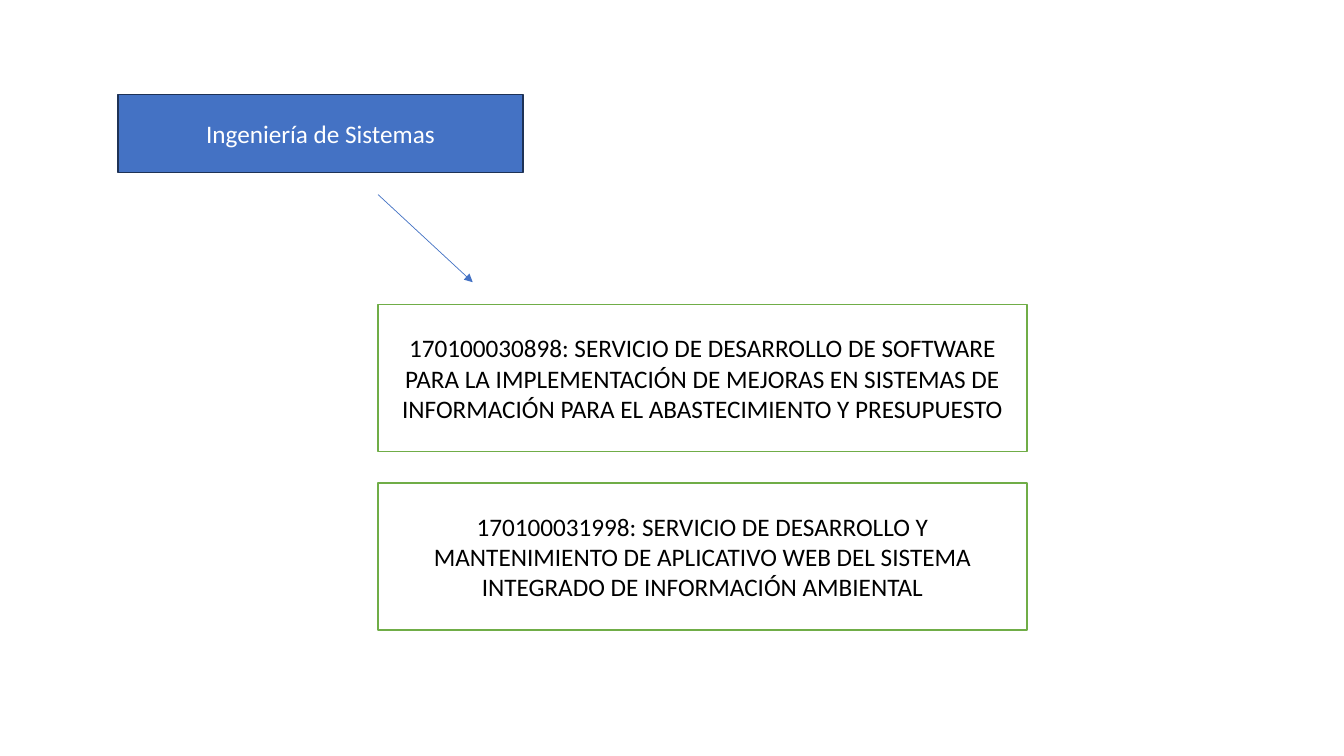
"""Build a slide that links a degree programme to its two service contracts."""
from dataclasses import dataclass

from lxml.etree import SubElement
from pptx import Presentation
from pptx.dml.color import RGBColor
from pptx.enum.shapes import MSO_CONNECTOR, MSO_SHAPE
from pptx.enum.text import MSO_ANCHOR, PP_ALIGN
from pptx.oxml.ns import qn
from pptx.slide import Slide
from pptx.util import Pt

SERVICE_LEFT = 270
SERVICE_TOP = 217.44
SERVICE_PITCH = 127.44
SERVICES = [
    "170100030898: SERVICIO DE DESARROLLO DE SOFTWARE PARA LA IMPLEMENTACIÓN "
    "DE MEJORAS EN SISTEMAS DE INFORMACIÓN PARA EL ABASTECIMIENTO Y PRESUPUESTO",
    "170100031998: SERVICIO DE DESARROLLO Y MANTENIMIENTO DE APLICATIVO WEB "
    "DEL SISTEMA INTEGRADO DE INFORMACIÓN AMBIENTAL",
]


@dataclass
class Box:
    text: str
    left: float
    top: float
    width: float
    height: float
    fill: str
    line: str
    text_color: str


@dataclass
class Arrow:
    start: tuple[float, float]
    end: tuple[float, float]
    color: str
    width: float


def color_of(value: str) -> RGBColor:
    return RGBColor.from_string(value)


def draw_box(slide: Slide, box: Box) -> None:
    shape = slide.shapes.add_shape(
        MSO_SHAPE.RECTANGLE, Pt(box.left), Pt(box.top), Pt(box.width), Pt(box.height)
    )
    shape.shadow.inherit = False
    shape.fill.solid()
    shape.fill.fore_color.rgb = color_of(box.fill)
    shape.line.color.rgb = color_of(box.line)
    shape.line.width = Pt(1)
    frame = shape.text_frame
    frame.word_wrap = True
    frame.vertical_anchor = MSO_ANCHOR.MIDDLE
    paragraph = frame.paragraphs[0]
    paragraph.alignment = PP_ALIGN.CENTER
    run = paragraph.add_run()
    run.text = box.text
    font_format = {"name": "Calibri", "size": Pt(18)}
    for attribute, value in font_format.items():
        setattr(run.font, attribute, value)
    run.font.color.rgb = color_of(box.text_color)


def draw_arrow(slide: Slide, arrow: Arrow) -> None:
    points = [Pt(value) for value in (*arrow.start, *arrow.end)]
    connector = slide.shapes.add_connector(MSO_CONNECTOR.STRAIGHT, *points)
    connector.line.color.rgb = color_of(arrow.color)
    connector.line.width = Pt(arrow.width)
    properties = connector.element.spPr
    SubElement(properties.find(qn("a:ln")), qn("a:tailEnd"), type="triangle")
    SubElement(properties, qn("a:effectLst"))


def main() -> None:
    presentation = Presentation()
    presentation.slide_width = Pt(960)
    presentation.slide_height = Pt(540)
    slide = presentation.slides.add_slide(presentation.slide_layouts[6])
    programme = Box(
        "Ingeniería de Sistemas", 84.24, 67.68, 289.44, 55.44,
        "4472C4", "1E3256", "FFFFFF",
    )
    services = [
        Box(
            text, SERVICE_LEFT, SERVICE_TOP + index * SERVICE_PITCH, 463.68, 105.12,
            "FFFFFF", "70AD47", "000000",
        )
        for index, text in enumerate(SERVICES)
    ]
    for box in [programme, *services]:
        draw_box(slide, box)
    draw_arrow(slide, Arrow((SERVICE_LEFT, 138.96), (337.68, 201.6), "4472C4", 0.5))
    presentation.save("out.pptx")


if __name__ == "__main__":
    main()
